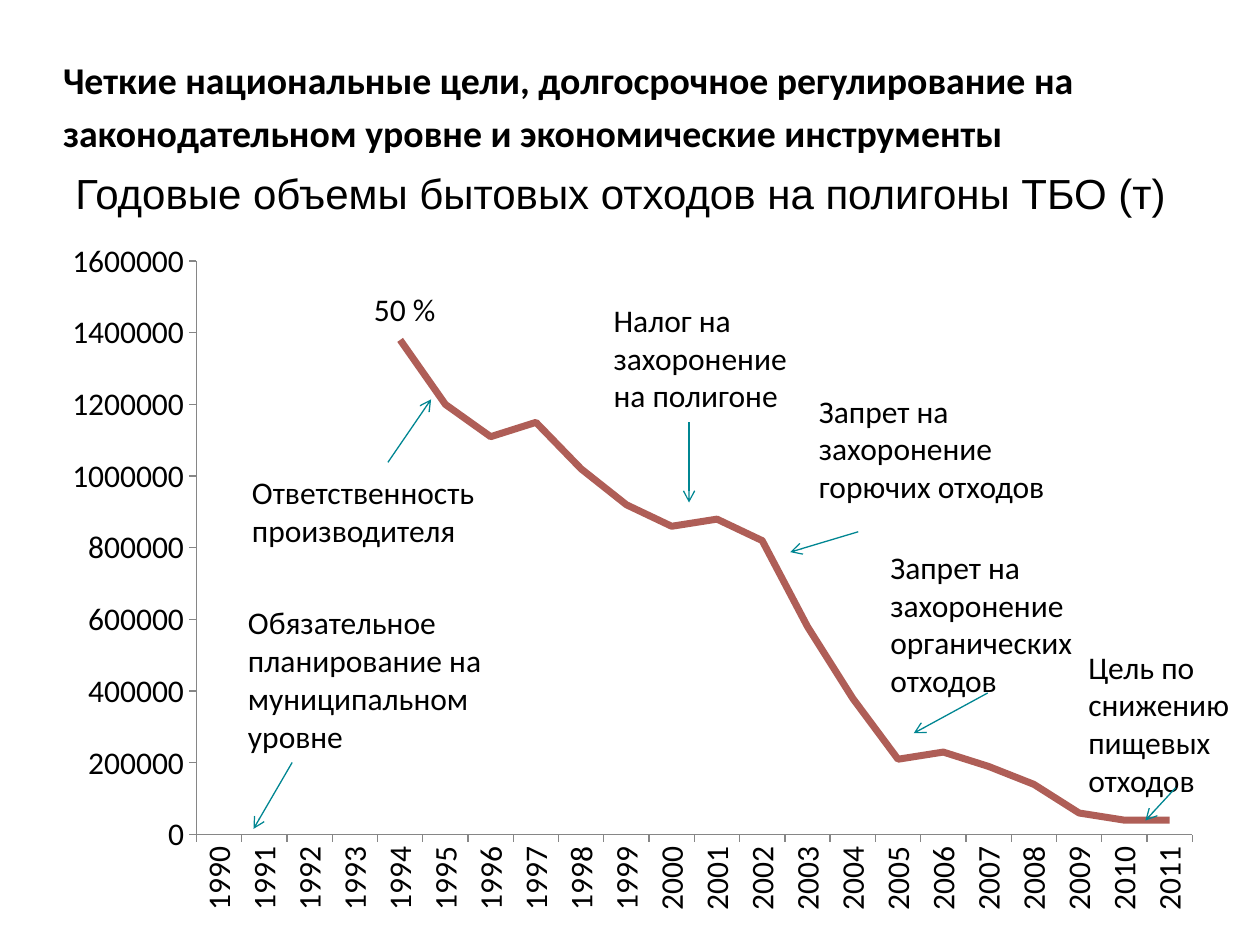
from dataclasses import dataclass
from lxml.etree import SubElement
from pptx import Presentation
from pptx.chart.data import CategoryChartData
from pptx.dml.color import RGBColor
from pptx.enum.chart import XL_CHART_TYPE, XL_MARKER_STYLE, XL_TICK_MARK
from pptx.enum.shapes import MSO_CONNECTOR
from pptx.enum.text import MSO_ANCHOR, MSO_AUTO_SIZE, PP_ALIGN
from pptx.oxml import parse_xml
from pptx.oxml.ns import nsdecls, qn
from pptx.util import Cm, Pt


@dataclass(frozen=True)
class Theme:
    ink: RGBColor = RGBColor(0, 0, 0)
    curve: RGBColor = RGBColor(0xAF, 0x5E, 0x57)
    arrow: RGBColor = RGBColor(0x00, 0x86, 0x92)
    axis: RGBColor = RGBColor(0x86, 0x86, 0x86)
    face: str = "Calibri"
    head: float = 21.6
    sub: int = 24
    body: int = 18


class Deck:
    def __init__(self, theme):
        self.theme = theme
        self.file = Presentation()
        self.file.slide_width, self.file.slide_height = Cm(25.4), Cm(19.05)
        self.slide = self.file.slides.add_slide(self.file.slide_layouts[5])

    def style(self, font, size, face=None, bold=False):
        font.name = face or self.theme.face
        font.size = Pt(size)
        font.bold = bold
        font.color.rgb = self.theme.ink

    def title(self, box, text):
        shape = self.slide.shapes.title
        shape.left, shape.top, shape.width, shape.height = map(Cm, box)
        frame = shape.text_frame
        frame.auto_size = MSO_AUTO_SIZE.NONE
        frame.word_wrap = True
        frame.vertical_anchor = MSO_ANCHOR.BOTTOM
        frame.margin_left = frame.margin_right = 0
        frame.margin_top = frame.margin_bottom = 0
        para = frame.paragraphs[0]
        para.alignment = PP_ALIGN.LEFT
        para.line_spacing = 1.18
        run = para.add_run()
        run.text = text
        self.style(run.font, self.theme.head, bold=True)

    def note(self, box, text, size=None, face=None, wrap=True):
        frame = self.slide.shapes.add_textbox(*map(Cm, box)).text_frame
        frame.word_wrap = wrap
        frame.auto_size = MSO_AUTO_SIZE.SHAPE_TO_FIT_TEXT
        run = frame.paragraphs[0].add_run()
        run.text = text
        self.style(run.font, size or self.theme.body, face)

    def arrow(self, ends):
        link = self.slide.shapes.add_connector(
            MSO_CONNECTOR.STRAIGHT, *map(Cm, ends))
        link.line.color.rgb = self.theme.arrow
        link.line.width = Pt(0.75)
        SubElement(link.line._get_or_add_ln(), qn("a:tailEnd"), type="arrow")
        SubElement(link._element.spPr, qn("a:effectLst"))

    def chart(self, box, cats, vals, plot):
        data = CategoryChartData()
        data.categories = cats
        data.add_series("Series 1", vals)
        chart = self.slide.shapes.add_chart(
            XL_CHART_TYPE.LINE, *map(Cm, box), data).chart
        chart.has_title = chart.has_legend = False
        self.style(chart.font, self.theme.body)
        chart.plots[0].vary_by_categories = False
        line = chart.plots[0].series[0]
        line.smooth = False
        line.marker.style = XL_MARKER_STYLE.NONE
        line.format.line.color.rgb = self.theme.curve
        line.format.line.width = Pt(4)
        for axis in (chart.category_axis, chart.value_axis):
            axis.has_major_gridlines = False
            axis.major_tick_mark = XL_TICK_MARK.OUTSIDE
            axis.minor_tick_mark = XL_TICK_MARK.NONE
            axis.format.line.color.rgb = self.theme.axis
            axis.format.line.width = Pt(0.75)
            self.style(axis.tick_labels.font, self.theme.body)
        chart.value_axis.minimum_scale = 0
        chart.value_axis.maximum_scale = 1600000
        chart.value_axis.major_unit = 200000
        turn = chart.category_axis._element.find(
            qn("c:txPr")).find(qn("a:bodyPr"))
        turn.set("rot", "-5400000")
        turn.set("vert", "horz")
        self.place(chart, plot)

    def place(self, chart, plot):
        area = chart.element.find(qn("c:chart")).find(qn("c:plotArea"))
        for old in area.findall(qn("c:layout")):
            area.remove(old)
        parts = "".join(f'<c:{key} val="{val}"/>' for key, val in (
            ("layoutTarget", "inner"), ("xMode", "edge"), ("yMode", "edge"),
            *zip("xywh", plot)))
        area.insert(0, parse_xml(
            f'<c:layout {nsdecls("c")}><c:manualLayout>{parts}'
            '</c:manualLayout></c:layout>'))


YEARS = [str(year) for year in range(1990, 2012)]
TONS = [None] * 4 + [1000 * num for num in (
    1380, 1200, 1110, 1150, 1020, 920, 860, 880, 820,
    580, 380, 210, 230, 190, 140, 60, 40, 40)]
NOTES = (
    ((4.75, 12.04, 5.94, 3.33),
     "Обязательное планирование на муниципальном уровне"),
    ((4.83, 9.42, 7.47, 1.8), "Ответственность производителя"),
    ((12.12, 5.94, 4.39, 2.57), "Налог на захоронение на полигоне"),
    ((16.26, 7.77, 5.38, 2.57), "Запрет на захоронение горючих отходов"),
    ((17.7, 10.92, 5.99, 3.33),
     "Запрет на захоронение органических отходов"),
    ((21.69, 12.93, 3.4, 3.33), "Цель по снижению пищевых отходов"),
)
ARROWS = (
    (5.89, 15.37, 5.11, 16.71),
    (13.89, 8.51, 13.89, 10.13),
    (17.3, 10.72, 15.93, 11.13),
    (19.91, 13.97, 18.42, 14.78),
    (7.82, 9.32, 8.69, 8.05),
    (23.7, 15.88, 23.09, 16.54),
)


def main():
    theme = Theme()
    deck = Deck(theme)
    deck.title((1.27, 0.74, 21.41, 2.39),
               "Четкие национальные цели, долгосрочное регулирование на "
               "законодательном уровне и экономические инструменты")
    deck.chart((0.89, 4.7, 23.62, 14.1), YEARS, TONS,
               (0.13, 0.04, 0.85, 0.82))
    for box, text in NOTES:
        deck.note(box, text)
    for ends in ARROWS:
        deck.arrow(ends)
    deck.note((1.27, 3.25, 22.83, 2.06),
              "Годовые объемы бытовых отходов на полигоны ТБО (т)",
              theme.sub, "Arial")
    deck.note((7.29, 5.72, 1.78, 1.02), "50 %", wrap=False)
    deck.file.save("out.pptx")


if __name__ == "__main__":
    main()
